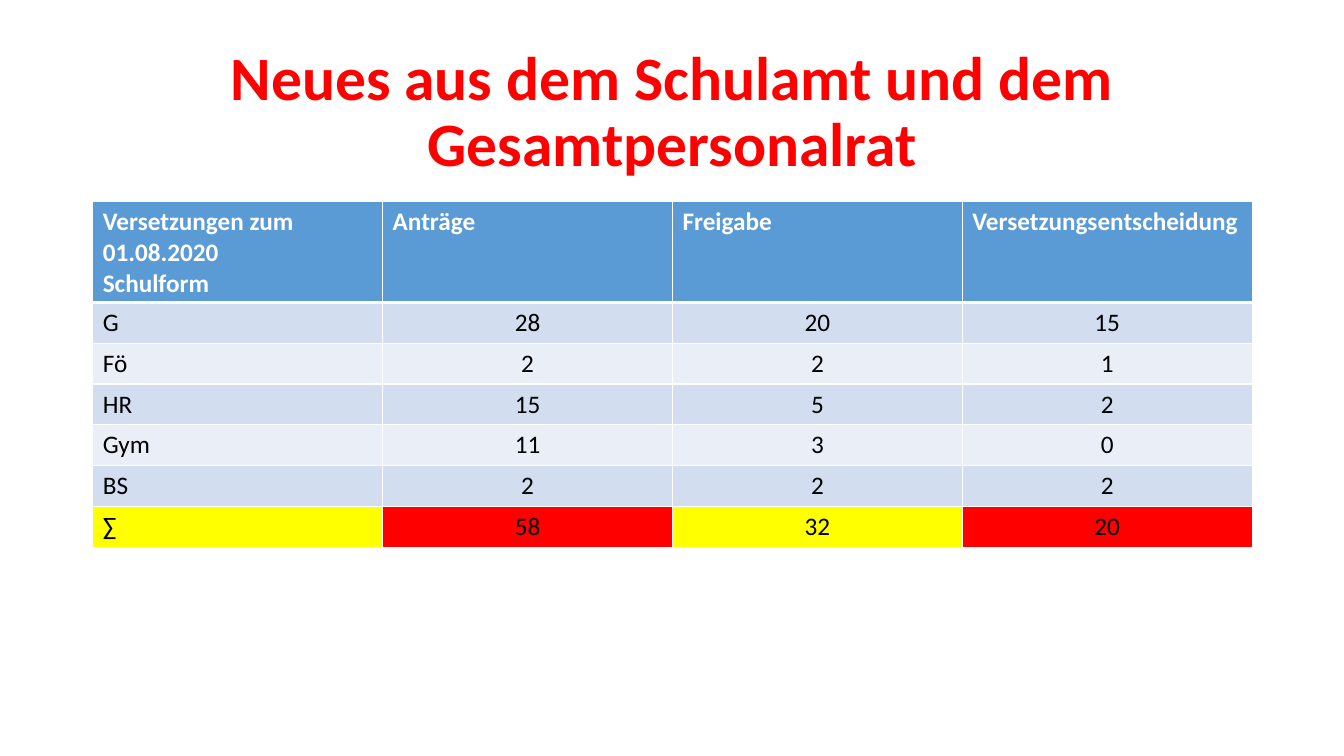
import pptx
import pptx.util
import pptx.dml.color
import pptx.enum.text
import pptx.oxml
import pptx.oxml.ns
from lxml import etree

TITLE = "Neues aus dem Schulamt und dem Gesamtpersonalrat"
ROWS = [
    ("Versetzungen zum 01.08.2020\nSchulform", "Anträge", "Freigabe", "Versetzungsentscheidung"),
    ("G", "28", "20", "15"),
    ("Fö", "2", "2", "1"),
    ("HR", "15", "5", "2"),
    ("Gym", "11", "3", "0"),
    ("BS", "2", "2", "2"),
    ("∑", "58", "32", "20"),
]
COLORS = {
    "title": "FF0000",
    "header": "5B9BD5",
    "odd": "D2DEEF",
    "even": "EAEFF7",
    "yellow": "FFFF00",
    "red": "FF0000",
    "white": "FFFFFF",
    "black": "000000",
}
FONT = "Calibri"
LEFT, WIDTH = 0.92, 11.5
HEADER_HEIGHT, ROW_HEIGHT = 1.0, 0.405

Inches = pptx.util.Inches
Pt = pptx.util.Pt
ALIGN = pptx.enum.text.PP_ALIGN


def color(name):
    return pptx.dml.color.RGBColor.from_string(COLORS[name])


def format_text(text_frame, size, color_name, bold, alignment):
    for paragraph in text_frame.paragraphs:
        paragraph.alignment = alignment
        for run in paragraph.runs:
            run.font.name = FONT
            run.font.size = Pt(size)
            run.font.bold = bold
            run.font.color.rgb = color(color_name)


def set_borders(cell, bottom_width):
    properties = cell._tc.get_or_add_tcPr()
    widths = {"lnL": 1, "lnR": 1, "lnT": 1, "lnB": bottom_width}
    for position, (tag, width) in enumerate(widths.items()):
        line = etree.Element(pptx.oxml.ns.qn("a:" + tag), w=str(Pt(width)))
        fill = etree.SubElement(line, pptx.oxml.ns.qn("a:solidFill"))
        etree.SubElement(fill, pptx.oxml.ns.qn("a:srgbClr"), val=COLORS["white"])
        properties.insert(position, line)


def fill_name(row, column):
    if row == 0:
        return "header"
    if row == len(ROWS) - 1:
        return "red" if column % 2 else "yellow"
    return "odd" if row % 2 else "even"


def add_title(slide):
    box = slide.shapes.add_textbox(Inches(LEFT), Inches(0.4), Inches(WIDTH), Inches(1.45))
    text_frame = box.text_frame
    text_frame.word_wrap = True
    text_frame.vertical_anchor = pptx.enum.text.MSO_ANCHOR.MIDDLE
    text_frame.text = TITLE
    text_frame.paragraphs[0].line_spacing = 0.9
    format_text(text_frame, 44, "title", True, ALIGN.CENTER)


def add_transfer_table(slide):
    height = HEADER_HEIGHT + ROW_HEIGHT * (len(ROWS) - 1)
    table = slide.shapes.add_table(
        len(ROWS), len(ROWS[0]), Inches(LEFT), Inches(2), Inches(WIDTH), Inches(height)
    ).table
    for row, values in enumerate(ROWS):
        is_header = row == 0
        table.rows[row].height = Inches(HEADER_HEIGHT if is_header else ROW_HEIGHT)
        for column, value in enumerate(values):
            cell = table.cell(row, column)
            cell.text_frame.text = value
            alignment = ALIGN.LEFT if is_header or column == 0 else ALIGN.CENTER
            format_text(cell.text_frame, 18, "white" if is_header else "black", is_header, alignment)
            cell.fill.solid()
            cell.fill.fore_color.rgb = color(fill_name(row, column))
            set_borders(cell, 3 if is_header else 1)


def main():
    presentation = pptx.Presentation()
    presentation.slide_width = Inches(13.33)
    presentation.slide_height = Inches(7.5)
    slide = presentation.slides.add_slide(presentation.slide_layouts[6])
    add_title(slide)
    add_transfer_table(slide)
    presentation.save("out.pptx")


if __name__ == "__main__":
    main()
